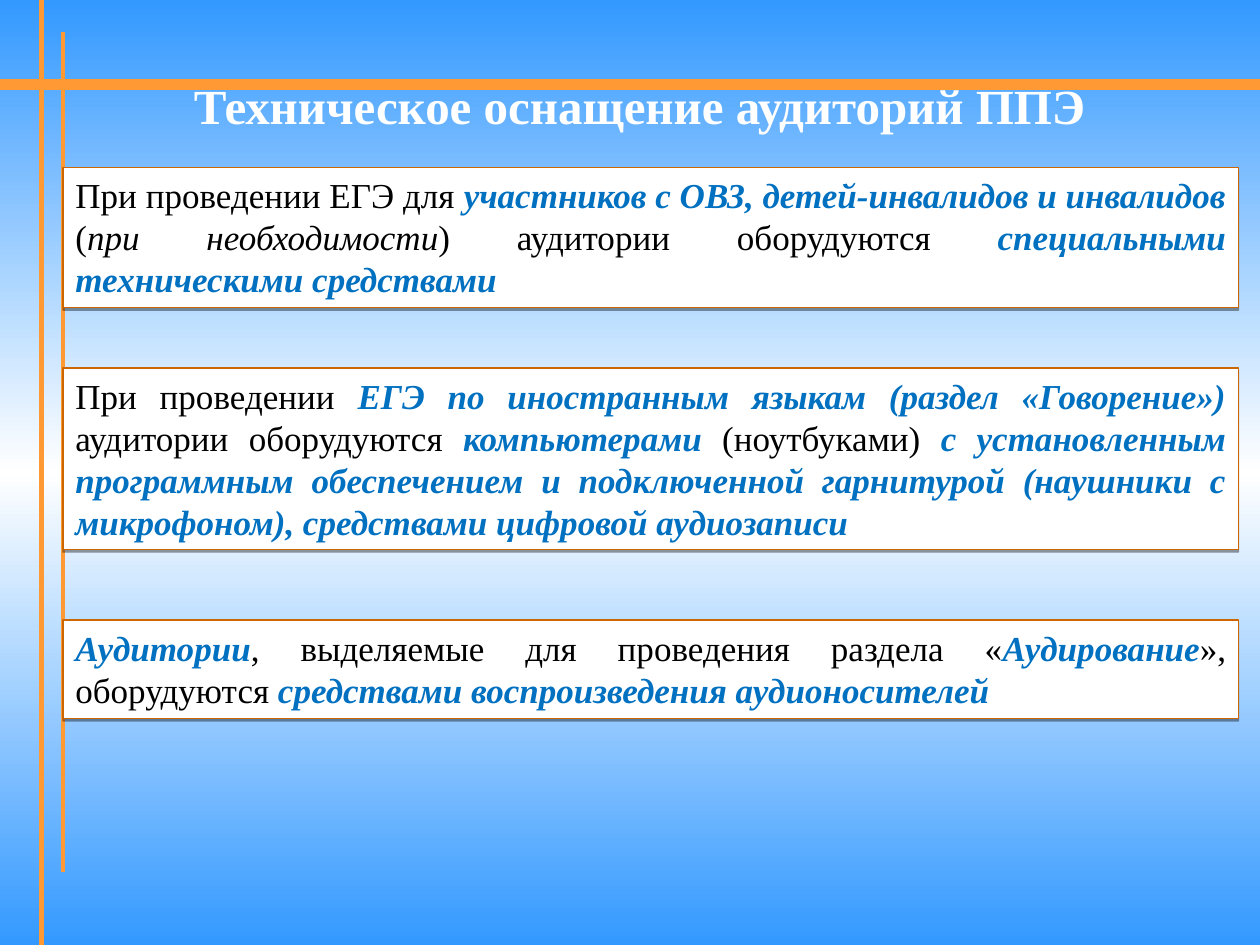
from copy import deepcopy

from lxml.etree import SubElement
from pptx import Presentation
from pptx.dml.color import RGBColor
from pptx.enum.shapes import MSO_CONNECTOR as Conn, MSO_SHAPE as Geom
from pptx.enum.text import MSO_ANCHOR as Anchor, PP_ALIGN as Align
from pptx.oxml.ns import qn
from pptx.util import Inches, Pt

ORANGE, BLUE, BLACK, WHITE = "FF9933", "0070C0", "000000", "FFFFFF"
PLAIN = (BLACK, False, False)
SLANT = (BLACK, False, True)
KEY = (BLUE, True, True)
HEAD = (WHITE, True, False)


def color(code):
    return RGBColor.from_string(code)


def write(shape, runs, size=20, align=Align.JUSTIFY, anchor=Anchor.MIDDLE):
    """Fill the shape with one paragraph of (text, (colour, bold, italic)) runs."""
    frame = shape.text_frame
    frame.word_wrap = True
    frame.vertical_anchor = anchor
    para = frame.paragraphs[0]
    para.alignment = align
    for text, (code, bold, italic) in runs:
        run = para.add_run()
        run.text = text
        font = run.font
        font.name, font.size = "Times New Roman", Pt(size)
        font.bold, font.italic = bold, italic
        font.color.rgb = color(code)


prs = Presentation()
prs.slide_width, prs.slide_height = Inches(10), Inches(7.5)
slide = prs.slides.add_slide(prs.slide_layouts[6])
shapes = slide.shapes

# Background: blue, white in the middle, blue again
back = slide.background.fill
back.gradient()
back.gradient_angle = 90
stops = slide.element.xpath(".//p:bg//a:gsLst")[0]
stops.append(deepcopy(stops[-1]))
for stop, pos, code in zip(back.gradient_stops, (0, 0.5, 1),
                           ("3399FF", WHITE, "3399FF")):
    stop.position = pos
    stop.color.rgb = color(code)

# Crossing lines
for x1, y1, x2, y2, width in [
    (0, 0.67, 10, 0.67, 6),
    (0.33, 0, 0.33, 7.5, 3),
    (0.5, 0.25, 0.5, 6.92, 2.25),
]:
    line = shapes.add_connector(Conn.STRAIGHT, Inches(x1), Inches(y1),
                                Inches(x2), Inches(y2))
    line.line.color.rgb = color(ORANGE)
    line.line.width = Pt(width)
    SubElement(line.element.spPr, qn("a:effectLst"))

title = shapes.add_textbox(Inches(0.42), Inches(0.58), Inches(9.31), Inches(0.5))
write(title, [("Техническое оснащение аудиторий ППЭ", HEAD)], size=28,
      align=Align.CENTER)

# White cards: top, height, runs
cards = [
    (1.33, 1.11, [
        ("При проведении ЕГЭ для ", PLAIN),
        ("участников с ОВЗ, детей-инвалидов и инвалидов ", KEY),
        ("(", PLAIN),
        ("при необходимости", SLANT),
        (") аудитории оборудуются ", PLAIN),
        ("специальными техническими средствами", KEY),
    ]),
    (2.92, 1.44, [
        ("При проведении ", PLAIN),
        ("ЕГЭ по иностранным языкам (раздел «Говорение») ", KEY),
        ("аудитории оборудуются ", PLAIN),
        ("компьютерами", KEY),
        (" (ноутбуками) ", PLAIN),
        ("с установленным программным обеспечением и подключенной гарнитурой "
         "(наушники с микрофоном), средствами цифровой аудиозаписи", KEY),
    ]),
    (4.92, 0.78, [
        ("Аудитории", KEY),
        (", выделяемые для проведения раздела «", PLAIN),
        ("Аудирование", KEY),
        ("», оборудуются ", PLAIN),
        ("средствами воспроизведения аудионосителей", KEY),
    ]),
]
for top, height, runs in cards:
    card = shapes.add_shape(Geom.RECTANGLE, Inches(0.5), Inches(top),
                            Inches(9.33), Inches(height))
    card.fill.solid()
    card.fill.fore_color.rgb = color(WHITE)
    card.line.color.rgb = color("CC6600")
    card.line.width = Pt(0.75)
    card.shadow.inherit = False
    effects = card.element.spPr.find(qn("a:effectLst"))
    shade = SubElement(effects, qn("a:outerShdw"), blurRad="0",
                       dist=str(Pt(1.6)), dir="5400000", rotWithShape="0")
    tint = SubElement(shade, qn("a:srgbClr"), val=BLACK)
    SubElement(tint, qn("a:alpha"), val="38000")
    write(card, runs, anchor=Anchor.TOP)

prs.save("out.pptx")
